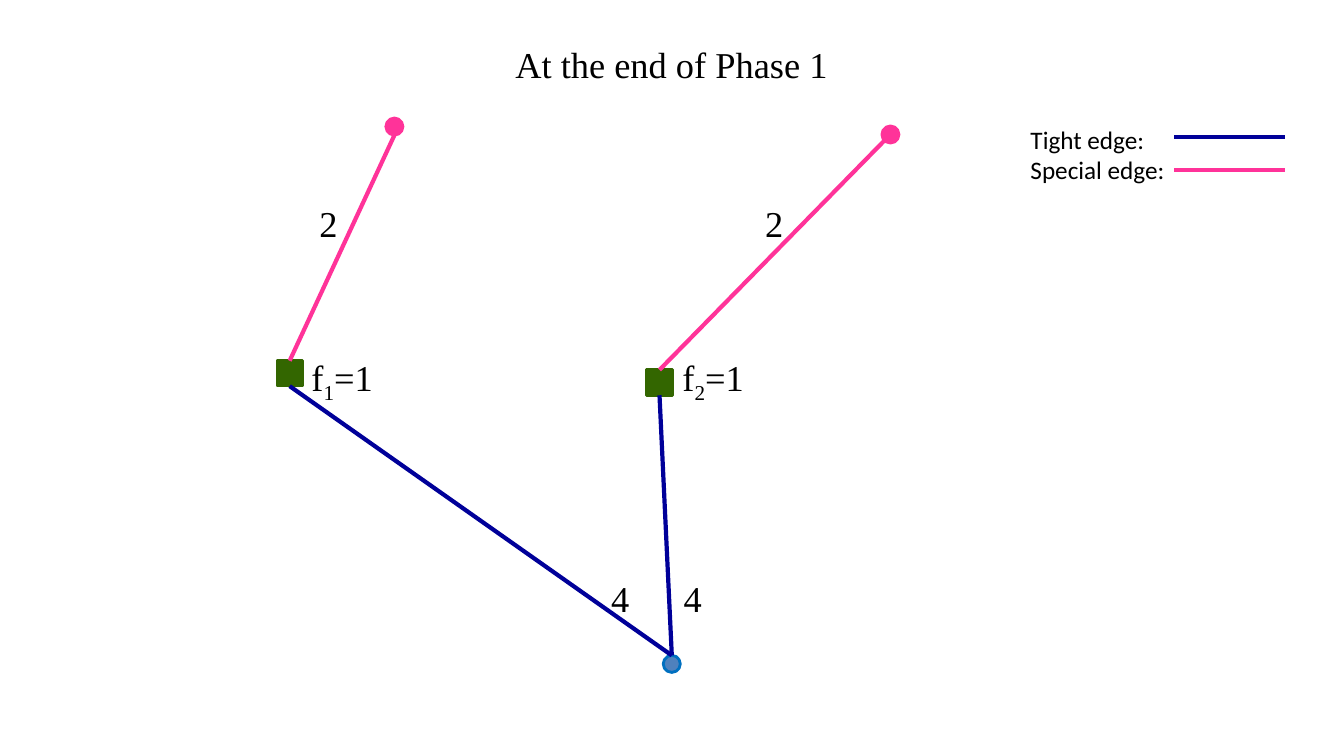
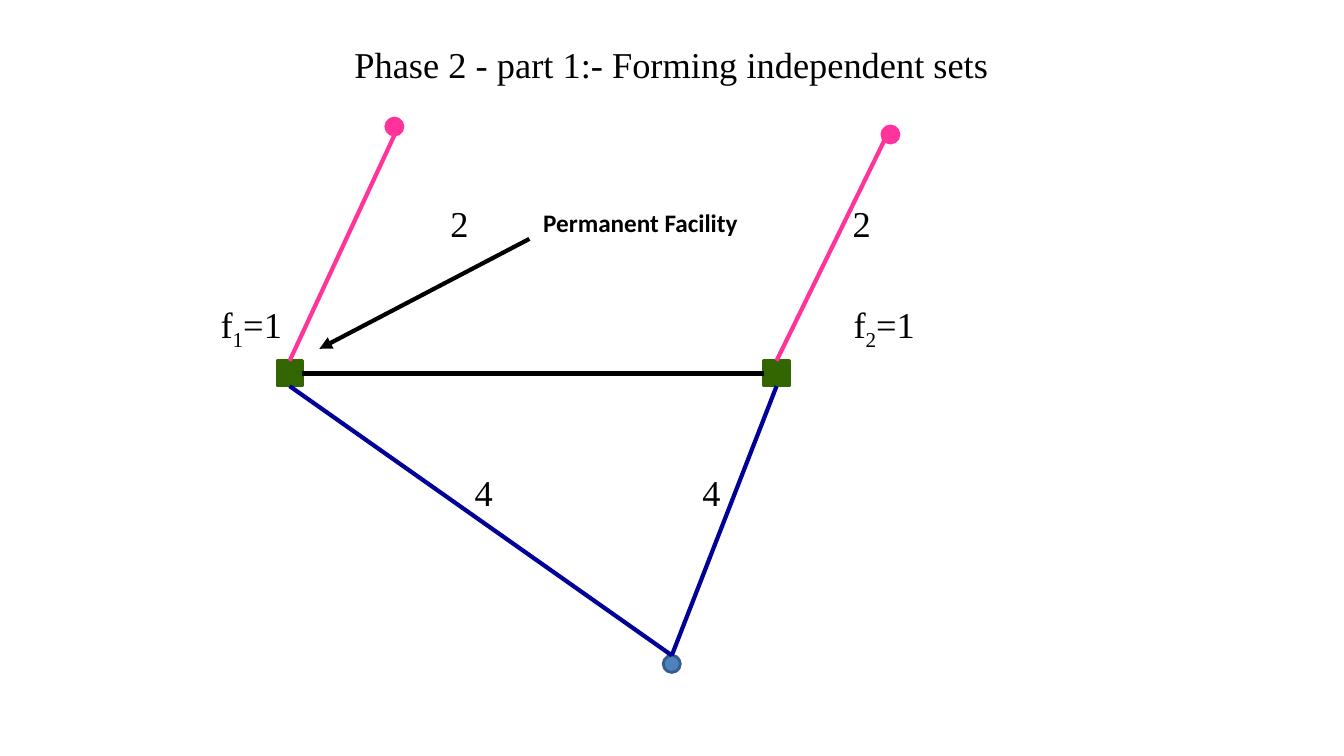
from lxml import etree
from pptx import Presentation
from pptx.dml.color import RGBColor
from pptx.enum.shapes import MSO_CONNECTOR, MSO_SHAPE
from pptx.enum.text import MSO_ANCHOR, MSO_AUTO_SIZE, PP_ALIGN
from pptx.oxml.ns import qn
from pptx.util import Cm, Pt

BLACK = RGBColor(0x00, 0x00, 0x00)
GREEN = RGBColor(0x33, 0x66, 0x00)
PINK = RGBColor(0xFF, 0x33, 0x99)
NAVY = RGBColor(0x00, 0x00, 0x99)
BLUE = RGBColor(0x4F, 0x81, 0xBD)
SKY = RGBColor(0x00, 0x70, 0xC0)
STEEL = RGBColor(0x38, 0x5D, 0x8A)

RECT = MSO_SHAPE.RECTANGLE
DOT = MSO_SHAPE.FLOWCHART_CONNECTOR
LINE = MSO_CONNECTOR.STRAIGHT
MIDDLE = MSO_ANCHOR.MIDDLE
FIXED = MSO_AUTO_SIZE.NONE
LEFT, CENTER = PP_ALIGN.LEFT, PP_ALIGN.CENTER

SERIF, SANS = "Times New Roman", "Calibri"
BOX, BALL = 0.64, 0.43  # node sizes in cm

# Node centres in cm
FIRST = (7.3, 9.41)
CITY = (16.93, 16.73)
NEAR = (9.94, 3.19)
FAR = (22.44, 3.39)


class Deck:
    """Holds the style and the current slide."""

    def __init__(self):
        self.prs = Presentation()
        self.prs.slide_width = Cm(33.87)
        self.prs.slide_height = Cm(19.05)

    def style(self, frame, font=SERIF, size=26, bold=False, align=LEFT):
        frame.margin_left = frame.margin_right = 0
        frame.margin_top = frame.margin_bottom = 0
        frame.vertical_anchor = MIDDLE
        frame.auto_size = FIXED
        for para in frame.paragraphs:
            para.alignment = align
            for run in para.runs:
                run.font.name = font
                run.font.size = Pt(size)
                run.font.bold = bold
                run.font.color.rgb = BLACK

    def page(self, title):
        self.slide = self.prs.slides.add_slide(self.prs.slide_layouts[5])
        head = self.slide.shapes.title
        head.left, head.top = Cm(5.08), Cm(0.9)
        head.width, head.height = Cm(23.7), Cm(1.4)
        head.text_frame.text = title
        self.style(head.text_frame, align=CENTER)

    def text(self, x, y, words, wide=2, high=1.2, **look):
        """Text starting at x and centred on height y."""
        box = self.slide.shapes.add_textbox(
            Cm(x), Cm(y - high / 2), Cm(wide), Cm(high))
        frame = box.text_frame
        frame.word_wrap = True
        frame.text = words
        self.style(frame, **look)
        return frame

    def cost(self, x, y, index):
        """Facility cost with a subscript index."""
        frame = self.text(x, y, "f")
        para = frame.paragraphs[0]
        for part in (index, "=1"):
            para.add_run().text = part
        self.style(frame)
        para.runs[1].font._element.set("baseline", "-25000")

    def node(self, kind, spot, size, fill, edge):
        x, y = spot
        shape = self.slide.shapes.add_shape(
            kind, Cm(x - size / 2), Cm(y - size / 2), Cm(size), Cm(size))
        shape.shadow.inherit = False
        shape.fill.solid()
        shape.fill.fore_color.rgb = fill
        shape.line.color.rgb = edge
        shape.line.width = Pt(2)

    def edge(self, start, end, color, arrow=False):
        line = self.slide.shapes.add_connector(
            LINE, *(Cm(v) for v in (*start, *end)))
        line.line.color.rgb = color
        line.line.width = Pt(3)
        props = line._element.spPr
        etree.SubElement(props, qn("a:effectLst"))
        if arrow:
            tip = etree.SubElement(props.find(qn("a:ln")), qn("a:tailEnd"))
            tip.set("type", "triangle")

    def graph(self, second, rim):
        """Two facilities, their special cities and the shared city."""
        for spot in (second, FIRST):
            self.node(RECT, spot, BOX, GREEN, GREEN)
        self.node(DOT, CITY, BALL, BLUE, rim)
        for spot in (FAR, NEAR):
            self.node(DOT, spot, BALL, PINK, PINK)
        # Edges meet the bottom of the near dot and the lower left of the far
        ends = (shift(NEAR, 0, BALL / 2), shift(FAR, -0.16, 0.16))
        for spot, end in zip((FIRST, second), ends):
            self.edge(shift(spot, 0, -BOX / 2), end, PINK)
            self.edge(shift(CITY, 0, -BALL / 2), shift(spot, 0, BOX / 2), NAVY)


def shift(spot, dx, dy):
    return spot[0] + dx, spot[1] + dy


def main():
    deck = Deck()

    # Phase 1: graph, edge lengths and legend
    deck.page("At the end of Phase 1")
    deck.graph((16.62, 9.64), SKY)
    for x, y, mark in ((8.05, 5.61, "2"), (19.28, 5.61, "2"),
                       (15.4, 15.06, "4"), (17.23, 15.06, "4")):
        deck.text(x, y, mark)
    deck.cost(7.85, 9.58, "1")
    deck.cost(17.2, 9.58, "2")
    deck.text(25.97, 3.9, "Tight edge:\nSpecial edge:", 5, 1.8,
              font=SANS, size=18)
    for y, color in ((3.45, NAVY), (4.29, PINK)):
        deck.edge((29.59, y), (32.39, y), color)

    # Phase 2: facilities joined, one made permanent
    deck.page("Phase 2 - part 1:- Forming independent sets")
    second = (19.57, FIRST[1])
    deck.graph(second, STEEL)
    for x, y, mark in ((11.35, 5.61, "2"), (21.49, 5.61, "2"),
                       (11.96, 12.4, "4"), (17.7, 12.4, "4")):
        deck.text(x, y, mark)
    deck.cost(5.56, 8.25, "1")
    deck.cost(21.51, 8.25, "2")
    deck.edge((13.34, 6.02), (8.05, 8.79), BLACK, arrow=True)
    deck.edge(shift(second, -BOX / 2, 0), shift(FIRST, BOX / 2, 0), BLACK)
    deck.text(13.69, 5.6, "Permanent Facility", 5.8,
              font=SANS, size=18, bold=True)

    deck.prs.save("out.pptx")


if __name__ == "__main__":
    main()
